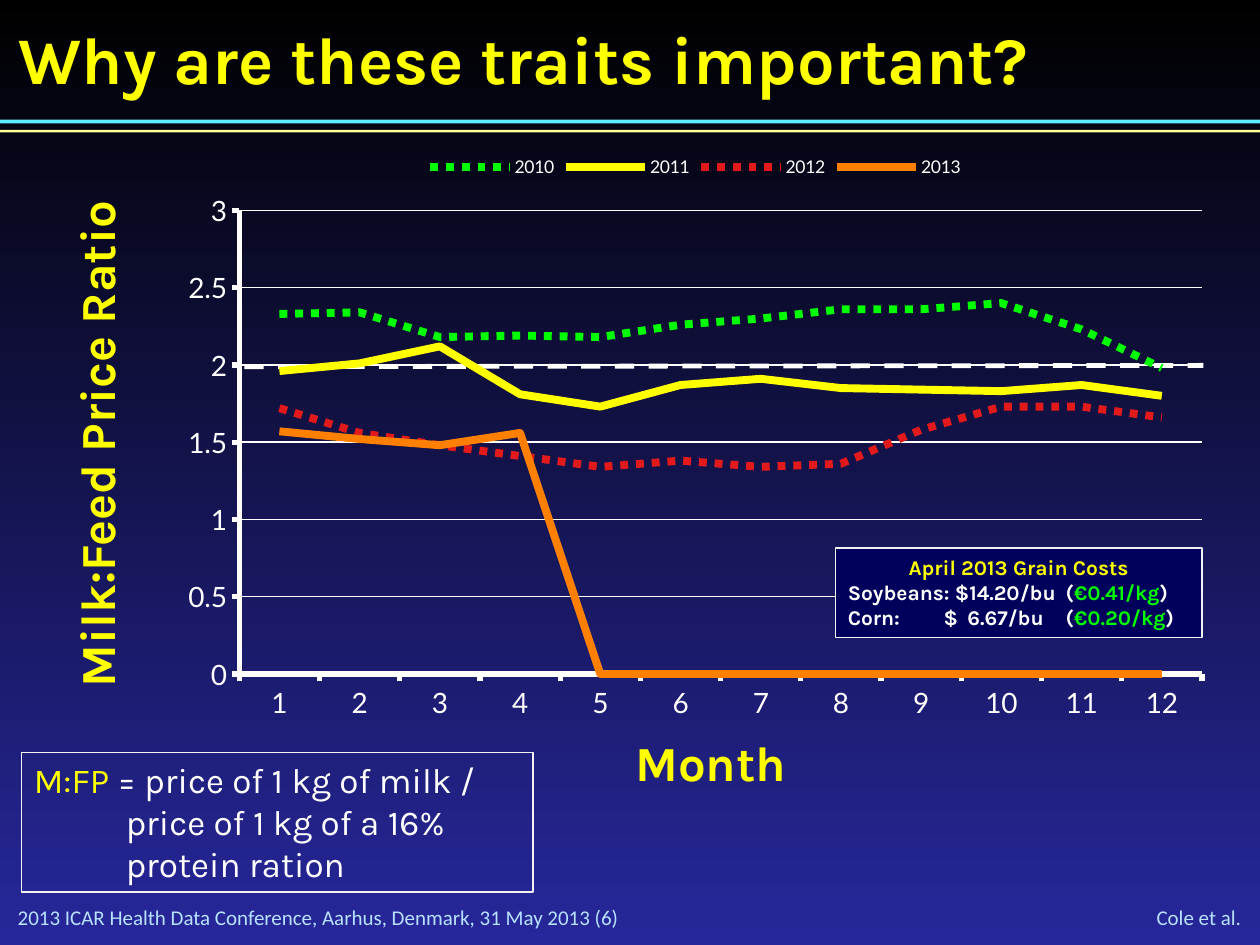
from dataclasses import dataclass
from pptx import Presentation
from pptx.chart.data import CategoryChartData as Data
from pptx.dml.color import RGBColor as Rgb
from pptx.enum.chart import XL_CHART_TYPE as Kind, XL_LEGEND_POSITION as Spot, XL_TICK_MARK as Tick
from pptx.enum.dml import MSO_LINE as Dash
from pptx.enum.shapes import MSO_CONNECTOR as Link, MSO_SHAPE as Form
from pptx.enum.text import MSO_ANCHOR as Anchor, PP_ALIGN as Align
from pptx.oxml import parse_xml
from pptx.oxml.ns import nsdecls, qn
from pptx.util import Inches, Pt


@dataclass(frozen=True)
class Theme:
    white: str = "FFFFFF"
    yellow: str = "FFFF00"
    green: str = "00FF00"
    red: str = "E31A1C"
    orange: str = "FF8000"
    pale: str = "B8E2FF"
    cyan: str = "5BEFFF"
    cream: str = "FFFF99"
    edge: str = "F2F2F2"
    navy: str = "00005C"
    top: str = "000000"
    base: str = "27279B"
    head: int = 38
    label: int = 28
    body: int = 20
    axis: int = 16
    small: int = 12
    key: int = 10
    face: str = "Karla"
    foot: str = "Calibri"
    plot: str = "Lato"


def color(code):
    return Rgb.from_string(code)


def write(par, text, size, ink, bold=False, face=Theme.face):
    run = par.add_run()
    run.text = text
    font = run.font
    font.size, font.bold, font.name = Pt(size), bold, face
    font.color.rgb = color(ink)


def stroke(line, ink, width, dash=None):
    line.color.rgb = color(ink)
    line.width = Pt(width)
    if dash:
        line.dash_style = dash


class Page:
    def __init__(self, deck, theme):
        self.theme = theme
        self.slide = deck.slides.add_slide(deck.slide_layouts[5])
        self.shapes = self.slide.shapes
        fill = self.slide.background.fill
        fill.gradient()
        fill.gradient_angle = 270
        for stop, ink, at in zip(fill.gradient_stops, (theme.top, theme.base), (0, 1)):
            stop.color.rgb = color(ink)
            stop.position = at

    def fit(self, frame, inset=None, anchor=Anchor.MIDDLE):
        frame.word_wrap = True
        frame.vertical_anchor = anchor
        if inset is not None:
            frame.margin_left = frame.margin_right = Inches(inset)
            frame.margin_top = frame.margin_bottom = Inches(inset)

    def title(self, text, box):
        shape = self.shapes.title
        shape.left, shape.top, shape.width, shape.height = map(Inches, box)
        self.fit(shape.text_frame, 0)
        par = shape.text_frame.paragraphs[0]
        par.alignment = Align.LEFT
        write(par, text, self.theme.head, self.theme.yellow, True)

    def text(self, text, box, align=Align.LEFT, turn=0, inset=None, **style):
        shape = self.shapes.add_textbox(*map(Inches, box))
        shape.rotation = turn
        self.fit(shape.text_frame, inset)
        par = shape.text_frame.paragraphs[0]
        par.alignment = align
        write(par, text, **style)

    def rect(self, box, fill=None, edge=None):
        shape = self.shapes.add_shape(Form.RECTANGLE, *map(Inches, box))
        shape.shadow.inherit = False
        if fill:
            shape.fill.solid()
            shape.fill.fore_color.rgb = color(fill)
        else:
            shape.fill.background()
        if edge:
            stroke(shape.line, edge, 0.75)
        else:
            shape.line.fill.background()
        return shape

    def panel(self, box, rows, size, bold=False, fill=None, tabs=()):
        frame = self.rect(box, fill, self.theme.edge).text_frame
        self.fit(frame, anchor=Anchor.TOP)
        for num, (align, indent, parts) in enumerate(rows):
            par = frame.add_paragraph() if num else frame.paragraphs[0]
            par.alignment = align
            props = par._p.get_or_add_pPr()
            props.set("marL", str(Inches(indent)))
            if tabs:
                stops = "".join(f'<a:tab pos="{Inches(tab)}" algn="l"/>' for tab in tabs)
                props.append(parse_xml(f'<a:tabLst {nsdecls("a")}>{stops}</a:tabLst>'))
            for text, ink in parts:
                write(par, text, size, ink, bold)

    def line(self, start, end, ink, width, dash):
        link = self.shapes.add_connector(Link.STRAIGHT, *map(Inches, start + end))
        stroke(link.line, ink, width, dash)
        link._element.spPr.append(parse_xml(f'<a:effectLst {nsdecls("a")}/>'))

    def chart(self, box, plot, cats, rows):
        theme = self.theme
        data = Data()
        data.categories = cats
        for name, vals, *_ in rows:
            data.add_series(name, vals)
        chart = self.shapes.add_chart(Kind.LINE, *map(Inches, box), data).chart
        chart.has_title = False
        chart.font.name, chart.font.size = theme.plot, Pt(theme.key)
        chart.font.color.rgb = color(theme.white)
        chart.has_legend = True
        chart.legend.position = Spot.TOP
        chart.legend.include_in_layout = False
        for axis in (chart.category_axis, chart.value_axis):
            axis.major_tick_mark = Tick.OUTSIDE
            axis.minor_tick_mark = Tick.NONE
            axis.tick_labels.font.size = Pt(theme.axis)
            stroke(axis.format.line, theme.white, 3)
        axis.minimum_scale, axis.maximum_scale, axis.major_unit = 0, 3, 0.5
        axis.has_major_gridlines = True
        stroke(axis.major_gridlines.format.line, theme.white, 0.75)
        chart.plots[0].vary_by_categories = False
        for series, (_, _, ink, dash) in zip(chart.plots[0].series, rows):
            series.smooth = False
            stroke(series.format.line, ink, 4.5, dash)
        area = chart._chartSpace.chart.plotArea
        for old in area.findall(qn("c:layout")):
            area.remove(old)
        left, top, wide, high = box
        spots = {"x": (plot[0] - left) / wide, "y": (plot[1] - top) / high,
                 "w": plot[2] / wide, "h": plot[3] / high}
        body = "".join(f'<c:{key}Mode val="edge"/>' for key in "xy")
        body += "".join(f'<c:{key} val="{val:.4f}"/>' for key, val in spots.items())
        area.insert(0, parse_xml(
            f'<c:layout {nsdecls("c")}><c:manualLayout><c:layoutTarget val="inner"/>'
            f'{body}</c:manualLayout></c:layout>'))
        chart._chartSpace.chart.find(qn("c:dispBlanksAs")).set("val", "zero")


def main():
    deck = Presentation()
    deck.slide_width, deck.slide_height = Inches(10), Inches(7.5)
    theme = Theme()
    page = Page(deck, theme)
    foot = dict(size=theme.small, ink=theme.pale, face=theme.foot, inset=0)
    page.text("2013 ICAR Health Data Conference, Aarhus, Denmark, 31 May 2013 (6)",
              (0.14, 7.18, 5.78, 0.2), **foot)
    page.rect((0, 0.95, 10, 0.03), theme.cyan)
    page.rect((0, 1.03, 10, 0.02), theme.cream)
    page.text("Cole et al.", (8.72, 7.17, 1.13, 0.21), Align.RIGHT, **foot)
    page.line((1.94, 2.91), (9.55, 2.9), theme.white, 2.75, Dash.DASH)
    dots = Dash.ROUND_DOT
    page.chart((1.33, 1.13, 8.38, 4.68), (1.9, 1.67, 7.64, 3.68),
               [str(month) for month in range(1, 13)], [
        ("2010", (2.33, 2.34, 2.18, 2.19, 2.18, 2.26, 2.3, 2.36, 2.36, 2.4, 2.23, 1.98),
         theme.green, dots),
        ("2011", (1.96, 2.01, 2.12, 1.81, 1.73, 1.87, 1.91, 1.85, 1.84, 1.83, 1.87, 1.8),
         theme.yellow, None),
        ("2012", (1.72, 1.56, 1.48, 1.41, 1.34, 1.38, 1.34, 1.36, 1.58, 1.73, 1.73, 1.66),
         theme.red, dots),
        ("2013", (1.57, 1.52, 1.48, 1.56) + (None,) * 8, theme.orange, None)])
    page.title("Why are these traits important?", (0.15, 0.14, 9, 0.64))
    white, yellow, green = theme.white, theme.yellow, theme.green
    page.panel((0.17, 5.97, 4.06, 1.11), [
        (Align.LEFT, 0, [("M:FP", yellow), (" = price of 1 kg of milk /", white)]),
        (Align.LEFT, 0.73, [("price of 1 kg of a 16%", white)]),
        (Align.LEFT, 0.73, [("protein ration", white)])], theme.body)
    label = dict(align=Align.CENTER, size=theme.label, ink=yellow, bold=True)
    page.text("Month", (3.17, 5.76, 4.94, 0.57), **label)
    page.text("Milk:Feed Price Ratio", (-1.42, 3.24, 4.36, 0.57), turn=270, **label)
    costs = [("Soybeans: $14.20/bu\t(", "€0.41/kg"), ("Corn:\t$\t6.67/bu\t(", "€0.20/kg")]
    rows = [(Align.CENTER, 0, [("April 2013 Grain Costs", yellow)])]
    rows += [(Align.LEFT, 0, [(bushel, white), (kilo, green), (")", white)])
             for bushel, kilo in costs]
    page.panel((6.63, 4.35, 2.91, 0.71), rows, theme.small, True, theme.navy, (0.76, 0.95, 1.73))
    deck.save("out.pptx")


if __name__ == "__main__":
    main()
